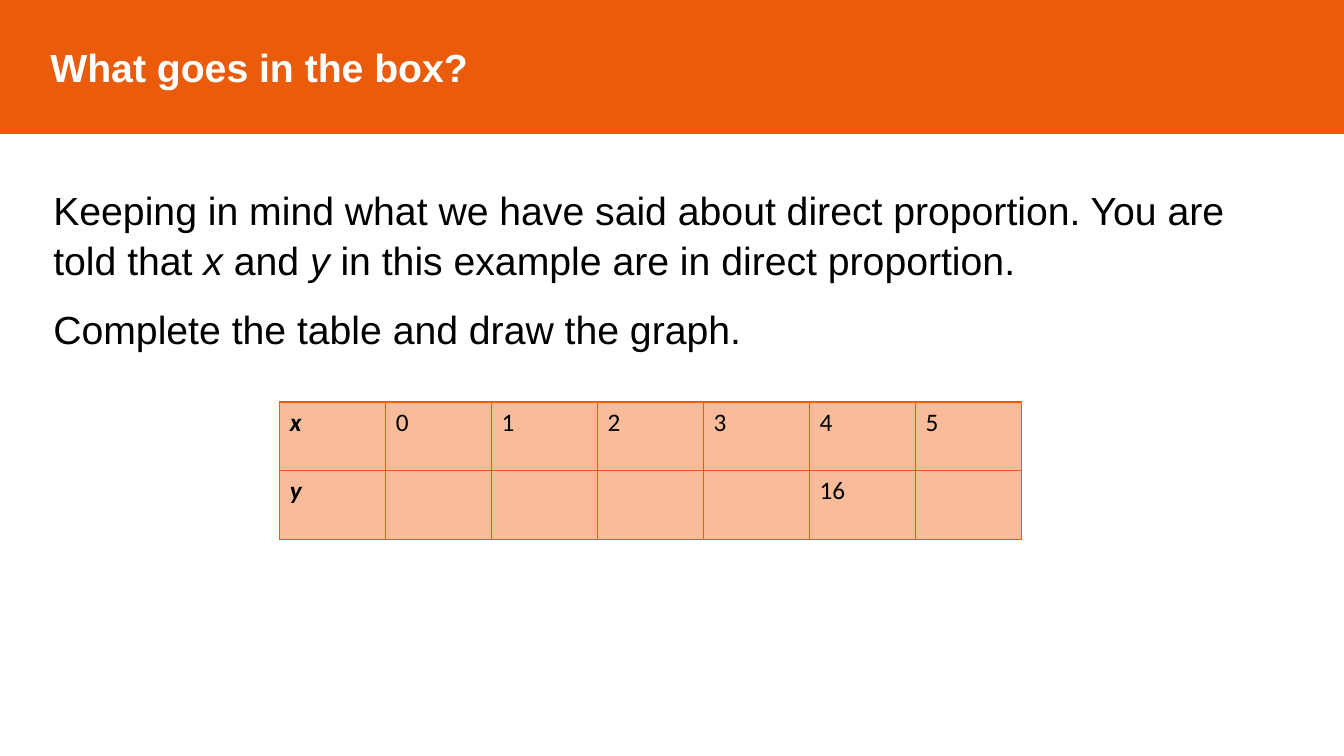
from dataclasses import dataclass

from lxml.etree import SubElement
from pptx import Presentation
from pptx.dml.color import RGBColor
from pptx.enum.text import MSO_ANCHOR as Anchor, MSO_AUTO_SIZE as AutoSize, PP_ALIGN as Align
from pptx.oxml.ns import qn
from pptx.util import Cm, Pt

ORANGE, PEACH, BLACK, WHITE = "EA5B0C", "F9BC9A", "000000", "FFFFFF"


@dataclass(frozen=True)
class Box:
    left: float
    top: float
    width: float
    height: float

    def emu(self) -> tuple:
        return Cm(self.left), Cm(self.top), Cm(self.width), Cm(self.height)


@dataclass(frozen=True)
class ValueRow:
    variable: str
    values: tuple


def paint(target, color: str) -> None:
    """Give a fill one solid colour."""
    target.solid()
    target.fore_color.rgb = RGBColor.from_string(color)


def write(paragraph, text: str, *, size: float = 28, font: str = "Arial",
          color: str = BLACK, bold: bool = False, italic: bool = False) -> None:
    run = paragraph.add_run()
    run.text = text
    run.font.size, run.font.name = Pt(size), font
    run.font.bold, run.font.italic = bold, italic
    paint(run.font.fill, color)


def place(placeholder, box: Box) -> None:
    placeholder.left, placeholder.top, placeholder.width, placeholder.height = box.emu()


def remove_bullet(paragraph) -> None:
    properties = paragraph._p.get_or_add_pPr()
    properties.set("marL", "0")
    properties.set("indent", "0")
    SubElement(properties, qn("a:buNone"))


def draw_borders(cell, color: str) -> None:
    properties = cell._tc.get_or_add_tcPr()
    for position, side in enumerate(("a:lnL", "a:lnR", "a:lnT", "a:lnB")):
        border = SubElement(properties, qn(side), w=str(Pt(1)))
        SubElement(SubElement(border, qn("a:solidFill")), qn("a:srgbClr"), val=color)
        properties.insert(position, border)  # borders precede the fill


def add_value_table(slide, rows: list, box: Box) -> None:
    columns = 1 + len(rows[0].values)
    table = slide.shapes.add_table(len(rows), columns, *box.emu()).table
    table.first_row = table.horz_banding = False
    for row_index, row in enumerate(rows):
        for column, text in enumerate((row.variable, *row.values)):
            cell = table.cell(row_index, column)
            paint(cell.fill, PEACH)
            draw_borders(cell, ORANGE)
            if text:
                is_variable = column == 0
                write(cell.text_frame.paragraphs[0], text, size=18, font="Calibri",
                      bold=is_variable, italic=is_variable)


def main() -> None:
    deck = Presentation()
    deck.slide_width, deck.slide_height = Cm(33.87), Cm(19.05)
    slide = deck.slides.add_slide(deck.slide_layouts[1])

    # Title banner
    banner = slide.shapes.title
    place(banner, Box(0, 0, 33.87, 3.36))
    paint(banner.fill, ORANGE)
    paint(banner.line.fill, ORANGE)
    banner.line.width = Pt(1)
    heading = banner.text_frame
    heading.auto_size = AutoSize.NONE
    heading.vertical_anchor = Anchor.MIDDLE
    heading.margin_left = Cm(1.27)
    heading.paragraphs[0].alignment = Align.LEFT
    write(heading.paragraphs[0], "What goes in the box?", color=WHITE, bold=True)

    # Instructions, with the variables in italics
    instructions = slide.placeholders[1]
    place(instructions, Box(1.09, 4.52, 30.61, 4.45))
    task = instructions.text_frame
    task.word_wrap = True
    task.auto_size = AutoSize.SHAPE_TO_FIT_TEXT
    premise, request = task.paragraphs[0], task.add_paragraph()
    for paragraph in (premise, request):
        paragraph.space_before = Pt(14)
        paragraph.line_spacing = 1.05
        remove_bullet(paragraph)
    write(premise, "Keeping in mind what we have said about direct proportion. You are told that ")
    write(premise, "x", italic=True)
    write(premise, " and ")
    write(premise, "y", italic=True)
    write(premise, " in this example are in direct proportion.")
    write(request, "Complete the table and draw the graph.")

    # Table of x and y values
    value_rows = [
        ValueRow("x", ("0", "1", "2", "3", "4", "5")),
        ValueRow("y", ("", "", "", "", "16", "")),
    ]
    add_value_table(slide, value_rows, Box(7.05, 10.13, 18.69, 3.46))

    deck.save("out.pptx")


if __name__ == "__main__":
    main()
